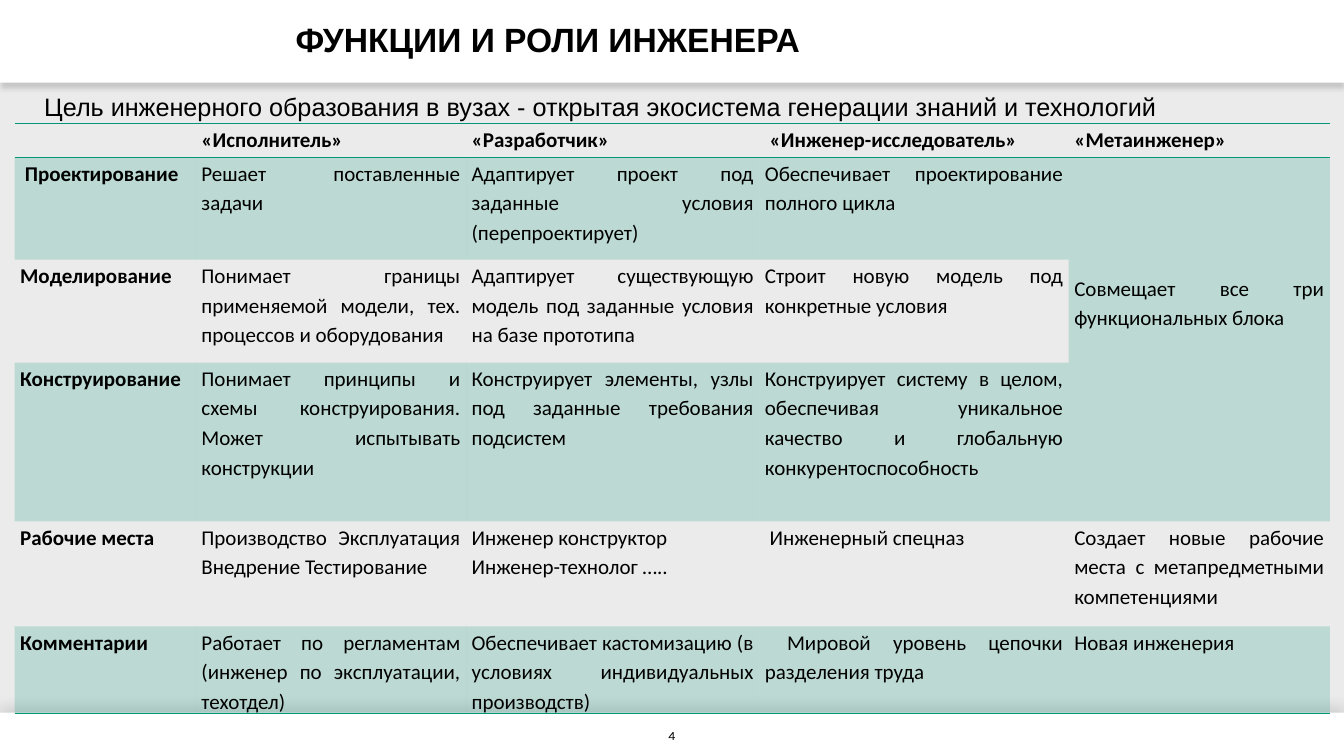
from lxml import etree
from pptx import Presentation
from pptx.dml.color import RGBColor
from pptx.enum.shapes import MSO_SHAPE
from pptx.enum.text import MSO_ANCHOR, PP_ALIGN
from pptx.oxml import parse_xml
from pptx.oxml.ns import nsdecls, qn
from pptx.util import Pt

RECTANGLE = MSO_SHAPE.RECTANGLE
TOP, MIDDLE = MSO_ANCHOR.TOP, MSO_ANCHOR.MIDDLE
LEFT, CENTER, JUSTIFY = PP_ALIGN.LEFT, PP_ALIGN.CENTER, PP_ALIGN.JUSTIFY
BLACK = RGBColor(0x00, 0x00, 0x00)
WHITE = RGBColor(0xFF, 0xFF, 0xFF)
GRAY = RGBColor(0xEB, 0xEB, 0xEB)
GREEN = RGBColor(0x02, 0x96, 0x76)
PLAIN_STYLE = "{2D5ABB26-0587-4C30-8999-92F81FD0307C}"


def write(frame, text, font, size, bold, alignment, spacing):
    frame.word_wrap = True
    paragraph = frame.paragraphs[0]
    paragraph.alignment = alignment
    paragraph.line_spacing = spacing
    run = paragraph.add_run()
    run.text = text
    run.font.name = font
    run.font.size = Pt(size)
    run.font.bold = bold
    run.font.color.rgb = BLACK


def add_border(cell, edge):
    line = parse_xml(
        f'<a:{edge} {nsdecls("a")} w="{Pt(1)}"><a:solidFill>'
        f'<a:srgbClr val="{GREEN}"/></a:solidFill></a:{edge}>')
    cell._tc.get_or_add_tcPr().insert(0, line)


presentation = Presentation()
presentation.slide_width = Pt(960)
presentation.slide_height = Pt(540)
slide = presentation.slides.add_slide(presentation.slide_layouts[6])
slide.background.fill.solid()
slide.background.fill.fore_color.rgb = GRAY

bands = [
    (0, 59, 14, 4, 90),
    (509, 31, 13, 9, 270),
]
for top, height, opacity, blur, angle in bands:
    band = slide.shapes.add_shape(RECTANGLE, 0, Pt(top), Pt(960), Pt(height))
    band.fill.solid()
    band.fill.fore_color.rgb = WHITE
    band.line.fill.background()
    band._element.spPr.append(parse_xml(
        f'<a:effectLst {nsdecls("a")}><a:outerShdw blurRad="{Pt(blur)}" dist="{Pt(4)}" '
        f'dir="{angle * 60000}" algn="ctr" rotWithShape="0"><a:srgbClr val="{BLACK}">'
        f'<a:alpha val="{opacity * 1000}"/></a:srgbClr></a:outerShdw></a:effectLst>'))

goal = "Цель инженерного образования в вузах - открытая экосистема генерации знаний и технологий"
labels = [
    (204, 7, 708, 45, "ФУНКЦИИ И РОЛИ ИНЖЕНЕРА", "Arial", 24, True, LEFT, 0.9, MIDDLE),
    (372, 510.5, 216, 29, "4", "Karla", 9, False, CENTER, 1.0, MIDDLE),
    (24.5, 57.6, 924, 31, goal, "Arial", 18, False, LEFT, 1.2, TOP),
]
for left, top, width, height, text, font, size, bold, alignment, spacing, anchor in labels:
    label = slide.shapes.add_textbox(Pt(left), Pt(top), Pt(width), Pt(height))
    label.text_frame.vertical_anchor = anchor
    write(label.text_frame, text, font, size, bold, alignment, spacing)

rows = [
    ["", "«Исполнитель»", "«Разработчик»", " «Инженер-исследователь»", "«Метаинженер»"],
    [" Проектирование", "Решает поставленные задачи",
     "Адаптирует проект под заданные условия (перепроектирует)",
     "Обеспечивает проектирование полного цикла",
     "Совмещает все три функциональных блока"],
    ["Моделирование",
     "Понимает границы применяемой модели, тех. процессов и оборудования",
     "Адаптирует существующую модель под заданные условия на базе прототипа",
     "Строит новую модель под конкретные условия", ""],
    ["Конструирование",
     "Понимает принципы и схемы конструирования. Может испытывать конструкции",
     "Конструирует элементы, узлы под заданные требования подсистем",
     "Конструирует систему в целом, обеспечивая уникальное качество и глобальную "
     "конкурентоспособность", ""],
    ["Рабочие места", "Производство Эксплуатация Внедрение Тестирование",
     "Инженер конструктор Инженер-технолог …..", " Инженерный спецназ",
     "Создает новые рабочие места с метапредметными компетенциями"],
    ["Комментарии", "Работает по регламентам (инженер по эксплуатации, техотдел)",
     "Обеспечивает кастомизацию (в условиях индивидуальных производств)",
     " Мировой уровень цепочки разделения труда", "Новая инженерия"],
]
column_widths = [129.5, 193, 209.5, 221, 186.5]
row_heights = [24.5, 73, 73.5, 113.5, 75, 61.5]
last_row = len(rows) - 1

table = slide.shapes.add_table(
    len(rows), len(column_widths), Pt(10.4), Pt(88),
    Pt(sum(column_widths)), Pt(sum(row_heights))).table
table.first_row = False
table.horz_banding = False
table._tbl.tblPr.find(qn("a:tableStyleId")).text = PLAIN_STYLE
for column, width in zip(table.columns, column_widths):
    column.width = Pt(width)
for row, height in zip(table.rows, row_heights):
    row.height = Pt(height)
table.cell(1, 4).merge(table.cell(3, 4))

for row_index, texts in enumerate(rows):
    for column_index, text in enumerate(texts):
        cell = table.cell(row_index, column_index)
        cell.margin_left = cell.margin_right = Pt(4)
        cell.margin_top = cell.margin_bottom = 0
        if row_index % 2 and not cell.is_spanned:
            cell.fill.solid()
            cell.fill.fore_color.rgb = GREEN
            color = cell._tc.tcPr.find(qn("a:solidFill"))[0]
            etree.SubElement(color, qn("a:alpha")).set("val", "20000")
        else:
            cell.fill.background()
        if row_index in (0, last_row):
            add_border(cell, "lnB")
        if row_index == 0:
            add_border(cell, "lnT")
        if text:
            bold = row_index == 0 or column_index == 0
            alignment = LEFT if (row_index, column_index) == (4, 2) else JUSTIFY
            write(cell.text_frame, text, "Calibri", 15, bold, alignment, 1.15)
table.cell(1, 4).margin_top = Pt(82)

presentation.save("out.pptx")
